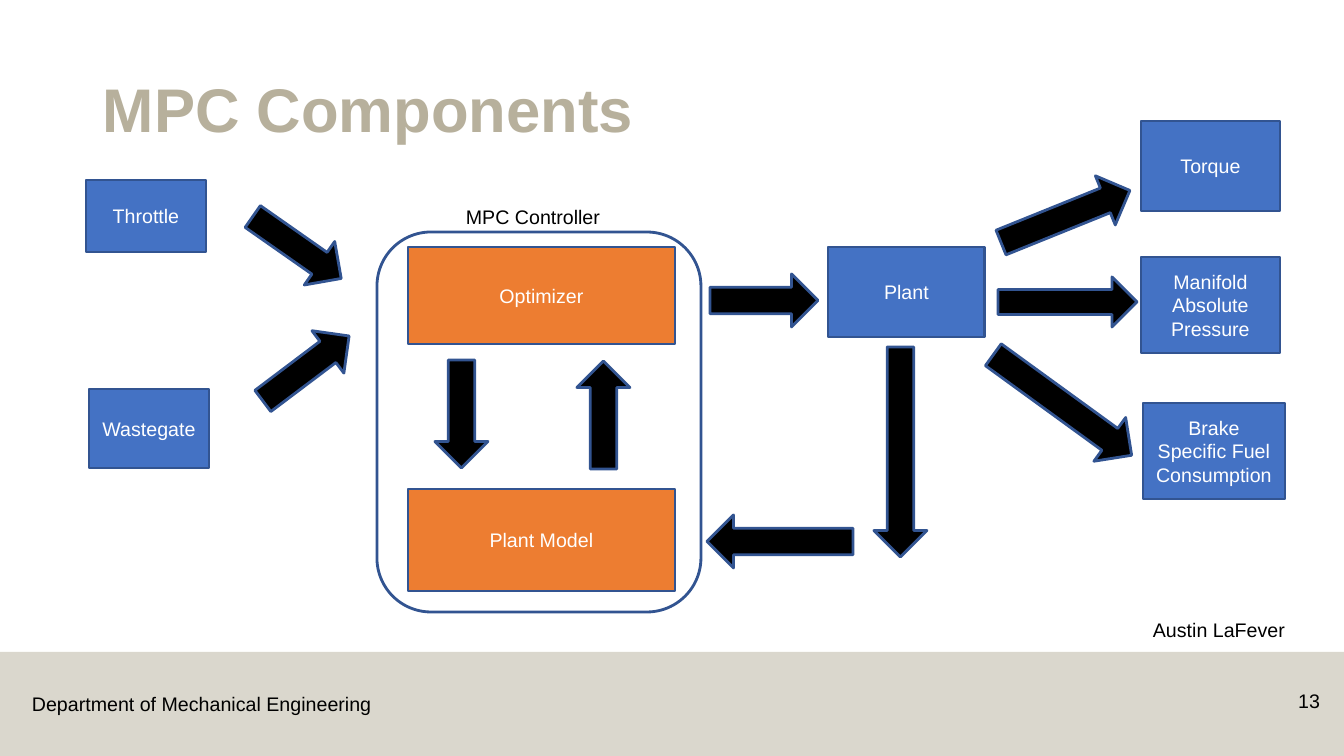
import pptx
import pptx.dml.color
import pptx.enum.shapes
import pptx.enum.text
import pptx.oxml.ns
import pptx.util
from lxml import etree

SHAPES = pptx.enum.shapes.MSO_SHAPE
ALIGN = pptx.enum.text.PP_ALIGN
ANCHOR = pptx.enum.text.MSO_ANCHOR
EMU_PER_PX = 914400 / 100.8

BLUE, ORANGE, OUTLINE = "4472C4", "ED7D31", "325491"
BLACK, WHITE, SAND = "000000", "FFFFFF", "B7B09C"


def px(length):
    return pptx.util.Emu(round(length * EMU_PER_PX))


def color(value):
    return pptx.dml.color.RGBColor.from_string(value)


class Diagram:
    """Holds the slide being drawn and its common text style."""

    text_format = {"name": "Arial", "size": pptx.util.Pt(14), "bold": False}

    def __init__(self, slide):
        self.slide = slide

    def set_text(self, shape, text, hue, align, anchor, line_spacing=1.0, **changes):
        frame = shape.text_frame
        frame.word_wrap = True
        frame.vertical_anchor = anchor
        paragraph = frame.paragraphs[0]
        paragraph.text = text
        paragraph.alignment = align
        paragraph.line_spacing = line_spacing
        for name, value in {**self.text_format, **changes}.items():
            setattr(paragraph.font, name, value)
        paragraph.font.color.rgb = color(hue)

    def text(self, box, text, hue=BLACK, align=ALIGN.LEFT, anchor=ANCHOR.TOP, **changes):
        shape = self.slide.shapes.add_textbox(*map(px, box))
        self.set_text(shape, text, hue, align, anchor, **changes)

    def outlined(self, kind, box, fill=None, rotation=0):
        shape = self.slide.shapes.add_shape(kind, *map(px, box))
        shape.shadow.inherit = False
        shape.rotation = rotation
        if fill:
            shape.fill.solid()
            shape.fill.fore_color.rgb = color(fill)
        else:
            shape.fill.background()
        shape.line.color.rgb = color(OUTLINE)
        shape.line.width = pptx.util.Pt(2)
        return shape

    def block(self, box, label, fill=BLUE):
        shape = self.outlined(SHAPES.RECTANGLE, box, fill)
        self.set_text(shape, label, WHITE, ALIGN.CENTER, ANCHOR.MIDDLE)

    def arrow(self, box, kind=SHAPES.RIGHT_ARROW, rotation=0):
        self.outlined(kind, box, BLACK, rotation)

    def band(self, box, fill, opacity):
        """Draw a borderless translucent rectangle; opacity is in percent."""
        shape = self.outlined(SHAPES.RECTANGLE, box, fill)
        shape.line.fill.background()
        hue = shape.element.find(".//" + pptx.oxml.ns.qn("a:srgbClr"))
        etree.SubElement(hue, pptx.oxml.ns.qn("a:alpha"), val=str(opacity * 1000))


def main():
    presentation = pptx.Presentation()
    presentation.slide_width = px(1344)
    presentation.slide_height = px(756)
    diagram = Diagram(presentation.slides.add_slide(presentation.slide_layouts[6]))

    diagram.band((0, 652, 1344, 104), SAND, 50)
    diagram.text((22, 687, 362, 34), "Department of Mechanical Engineering")
    diagram.text((93, 40, 1159, 146), "MPC Components", SAND, anchor=ANCHOR.MIDDLE,
                 line_spacing=0.9, size=pptx.util.Pt(44), bold=True)
    diagram.text((1252, 684, 78, 40), "13", align=ALIGN.RIGHT)
    diagram.text((1143, 613, 201, 34), "Austin LaFever")

    # Inputs
    diagram.block((86, 180, 120, 72), "Throttle")
    diagram.block((89, 389, 120, 79), "Wastegate")
    diagram.arrow((243, 221, 108, 53), rotation=35)
    diagram.arrow((252, 342, 108, 53), rotation=323)

    # Controller
    diagram.outlined(SHAPES.ROUNDED_RECTANGLE, (377, 232, 324, 380))
    diagram.text((456, 200, 302, 34), "MPC Controller")
    diagram.block((408, 247, 267, 97), "Optimizer", ORANGE)
    diagram.block((408, 489, 267, 102), "Plant Model", ORANGE)
    diagram.arrow((435, 360, 53, 108), SHAPES.DOWN_ARROW)
    diagram.arrow((577, 361, 53, 108), SHAPES.UP_ARROW)

    # Plant and its feedback to the model
    diagram.arrow((710, 274, 108, 53))
    diagram.block((828, 247, 157, 90), "Plant")
    diagram.arrow((874, 347, 53, 210), SHAPES.DOWN_ARROW)
    diagram.arrow((707, 515, 146, 53), SHAPES.LEFT_ARROW)

    # Outputs
    diagram.block((1141, 121, 139, 90), "Torque")
    diagram.block((1141, 257, 139, 96), "Manifold Absolute Pressure")
    diagram.block((1143, 403, 142, 96), "Brake Specific Fuel Consumption")
    diagram.arrow((996, 190, 139, 53), rotation=338)
    diagram.arrow((998, 277, 139, 50))
    diagram.arrow((977, 378, 171, 54), rotation=36)

    presentation.save("out.pptx")


if __name__ == "__main__":
    main()
